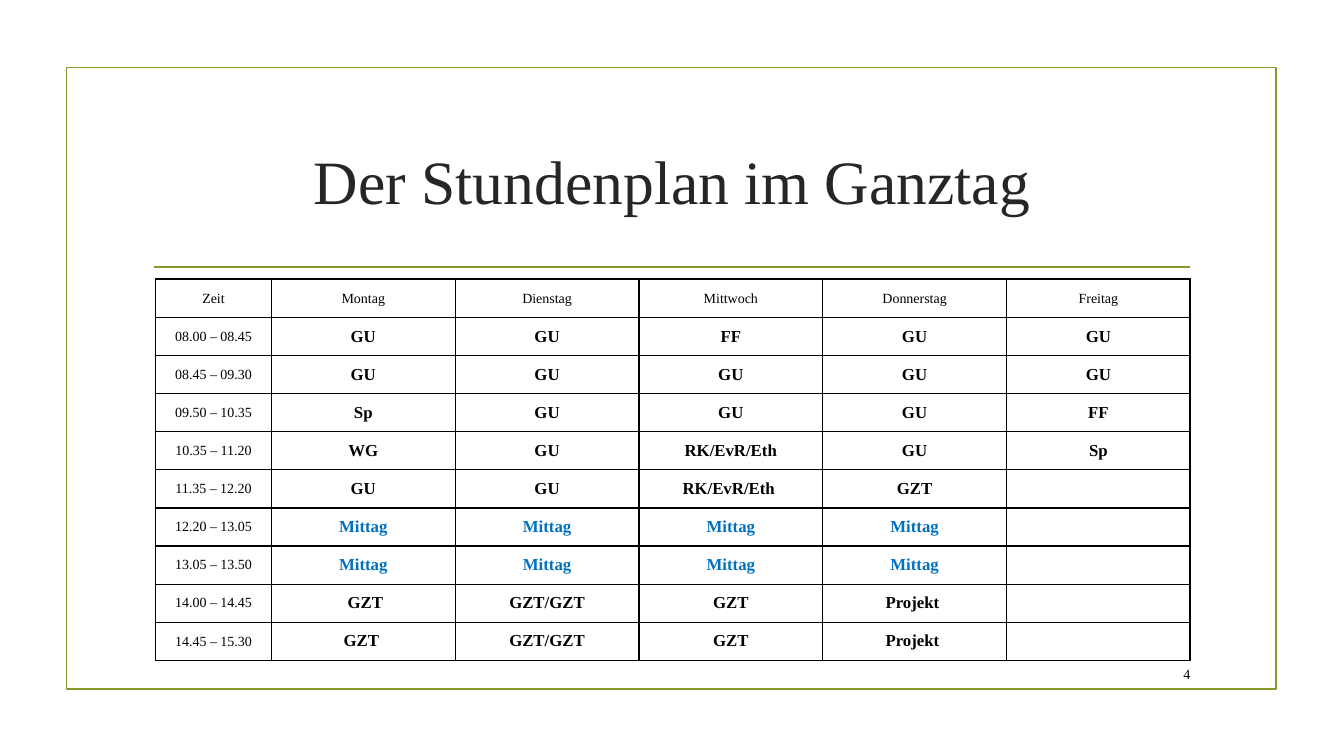
from lxml import etree
from pptx import Presentation
from pptx.dml.color import RGBColor
from pptx.enum.shapes import MSO_CONNECTOR as Connector, MSO_SHAPE as Shape
from pptx.enum.text import MSO_ANCHOR as Anchor, PP_ALIGN as Align
from pptx.oxml.ns import qn
from pptx.util import Cm, Pt

FONT = "Times New Roman"
GREEN, BLACK, BLUE, TITLE_GREY = "83992A", "000000", "0070C0", "262626"
THIN, THICK = 1, 1.5
LUNCH_ROW = 6

TIMETABLE = [
    ["Zeit", "Montag", "Dienstag", "Mittwoch", "Donnerstag", "Freitag"],
    ["08.00 – 08.45", "GU", "GU", "FF", "GU", "GU"],
    ["08.45 – 09.30", "GU", "GU", "GU", "GU", "GU"],
    ["09.50 – 10.35", "Sp", "GU", "GU", "GU", "FF"],
    ["10.35 – 11.20", "WG", "GU", "RK/EvR/Eth", "GU", "Sp"],
    ["11.35 – 12.20", "GU", "GU", "RK/EvR/Eth ", "GZT", ""],
    ["12.20 – 13.05", "Mittag", "Mittag", "Mittag", "Mittag", ""],
    ["13.05 – 13.50", "Mittag", "Mittag", "Mittag", "Mittag", ""],
    ["14.00 – 14.45", " GZT", "GZT/GZT", "GZT", "Projekt ", ""],
    ["14.45 – 15.30", "GZT ", "GZT/GZT", "GZT", "Projekt ", ""],
]


def rgb(value):
    """Return the colour for a hex string."""
    return RGBColor.from_string(value)


def write(frame, text, size, colour, align, bold=False):
    """Put one formatted paragraph into a text frame."""
    frame.text = text
    paragraph = frame.paragraphs[0]
    paragraph.alignment = align
    for run in paragraph.runs:
        run.font.name = FONT
        run.font.size = Pt(size)
        run.font.bold = bold
        run.font.color.rgb = rgb(colour)


def add_label(slide, box, text, size, colour, align):
    """Add a vertically centred text box."""
    frame = slide.shapes.add_textbox(*map(Cm, box)).text_frame
    frame.word_wrap = True
    frame.vertical_anchor = Anchor.MIDDLE
    write(frame, text, size, colour, align)


def add_frame(slide, box):
    """Draw the green frame around the slide content."""
    frame = slide.shapes.add_shape(Shape.RECTANGLE, *map(Cm, box))
    frame.shadow.inherit = False
    frame.fill.background()
    frame.line.color.rgb = rgb(GREEN)
    frame.line.width = Pt(1.25)


def add_heading(slide, box, text):
    """Add the title with the green rule below it."""
    left, top, width, height = box
    rule_left, rule_top, rule_width = left + 0.28, top + height + 0.38, width - 0.56
    rule = slide.shapes.add_connector(
        Connector.STRAIGHT, Cm(rule_left), Cm(rule_top),
        Cm(rule_left + rule_width), Cm(rule_top))
    rule.line.color.rgb = rgb(GREEN)
    rule.line.width = Pt(1.25)
    etree.SubElement(rule._element.spPr, qn("a:effectLst"))
    add_label(slide, box, text, 44, TITLE_GREY, Align.CENTER)


def set_borders(cell, widths):
    """Draw black cell borders with the given widths per side."""
    properties = cell._tc.get_or_add_tcPr()
    for side in "LRTB":
        border = etree.SubElement(properties, qn(f"a:ln{side}"), w=str(Pt(widths[side])))
        fill = etree.SubElement(border, qn("a:solidFill"))
        etree.SubElement(fill, qn("a:srgbClr"), val=BLACK)


def border_widths(row, column):
    """Return the border widths for a timetable position."""
    thick_rules = (0, 1, LUNCH_ROW + 1)
    last_column = len(TIMETABLE[0]) - 1
    return {
        "L": THICK if column == 0 else THIN,
        "R": THICK if column == last_column else THIN,
        "T": THICK if row in thick_rules else THIN,
        "B": THICK if row + 1 in thick_rules else THIN,
    }


def add_timetable(slide, box):
    """Add the weekly timetable with a narrow time column."""
    width, height = box[2:]
    row_count, column_count = len(TIMETABLE), len(TIMETABLE[0])
    table = slide.shapes.add_table(row_count, column_count, *map(Cm, box)).table
    table.first_row = table.horz_banding = False
    time_width = 2.92
    day_width = (width - time_width) / (column_count - 1)
    for index, column in enumerate(table.columns):
        column.width = Cm(day_width if index else time_width)
    for row in table.rows:
        row.height = Cm(height / row_count)
    for row, entries in enumerate(TIMETABLE):
        for column, entry in enumerate(entries):
            cell = table.cell(row, column)
            cell.margin_left = cell.margin_right = Cm(0.15)
            cell.margin_top = cell.margin_bottom = 0
            cell.vertical_anchor = Anchor.MIDDLE
            lesson = row > 0 and column > 0
            colour = BLUE if entry == "Mittag" else BLACK
            write(cell.text_frame, entry, 12 if lesson else 10, colour, Align.CENTER, lesson)
            set_borders(cell, border_widths(row, column))
            cell.fill.background()


def add_page_number(slide, box, number):
    """Add the slide number at the lower right."""
    add_label(slide, box, number, 10, BLACK, Align.RIGHT)


def main():
    """Build and save the timetable slide."""
    presentation = Presentation()
    presentation.slide_width = Cm(33.87)
    presentation.slide_height = Cm(19.05)
    slide = presentation.slides.add_slide(presentation.slide_layouts[6])
    add_frame(slide, (1.68, 1.7, 30.48, 15.67))
    add_heading(slide, (3.61, 2.72, 26.67, 3.63), "Der Stundenplan im Ganztag")
    add_timetable(slide, (3.92, 7.04, 26.08, 9.6))
    add_page_number(slide, (28.75, 16.59, 1.5, 0.79), "4")
    presentation.save("out.pptx")


if __name__ == "__main__":
    main()
